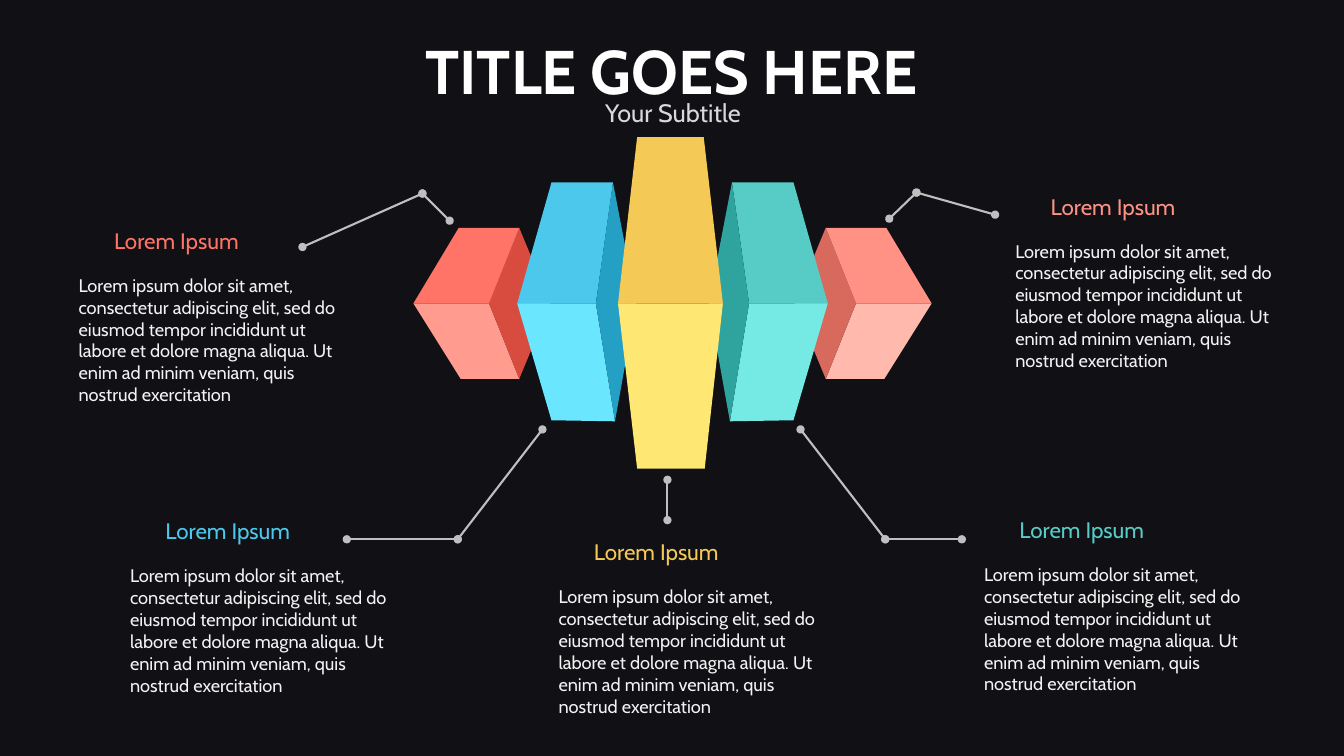
from lxml import etree
from pptx import Presentation
from pptx import util as u
from pptx.dml.color import RGBColor
from pptx.enum import shapes, text
from pptx.oxml.ns import qn


def color(value):
    return RGBColor.from_string(value)


def add_text(slide, content, box, font_format, frame_format, alignment):
    shape = slide.shapes.add_textbox(*(u.Inches(value) for value in box))
    frame = shape.text_frame
    frame_format = {"word_wrap": True, "auto_size": text.MSO_AUTO_SIZE.SHAPE_TO_FIT_TEXT} | frame_format
    for name, value in frame_format.items():
        setattr(frame, name, value)
    paragraph = frame.paragraphs[0]
    paragraph.text = content
    paragraph.alignment = alignment
    font = paragraph.runs[0].font
    font_format = {"name": "Cabin"} | font_format
    font.color.rgb = color(font_format.pop("color"))
    for name, value in font_format.items():
        setattr(font, name, value)


presentation = Presentation()
presentation.slide_width = u.Inches(13.33)
presentation.slide_height = u.Inches(7.5)
slide = presentation.slides.add_slide(presentation.slide_layouts[6])
slide.background.fill.solid()
slide.background.fill.fore_color.rgb = color("101015")

MIDDLE = 3.01
MIRROR_SUM = 13.34
outer_faces = [
    [(4.85, MIDDLE), (4.1, MIDDLE), (4.57, 3.76), (5.15, 3.76)],
    [(5.46, MIDDLE), (5.15, 2.26), (4.85, MIDDLE), (5.15, 3.76)],
    [(4.85, MIDDLE), (5.15, 2.26), (4.55, 2.26), (4.1, MIDDLE)],
]
inner_faces = [
    [(6.08, 1.81), (5.47, 1.81), (5.13, MIDDLE), (5.91, MIDDLE)],
    [(6.1, 4.18), (5.91, MIDDLE), (5.13, MIDDLE), (5.47, 4.17)],
    [(6.08, 1.81), (5.91, MIDDLE), (6.1, 4.18), (6.31, MIDDLE)],
]
center_faces = [
    [(6.13, MIDDLE), (7.17, MIDDLE), (6.99, 4.65), (6.32, 4.65)],
    [(7.17, MIDDLE), (6.13, MIDDLE), (6.32, 1.36), (6.98, 1.36)],
]
blocks = [
    (outer_faces, True, ["FFBAAD", "D76A5D", "FF9285"]),
    (inner_faces, True, ["57CCC6", "75EAE4", "2FA49E"]),
    (outer_faces, False, ["FF9C8F", "D74C3F", "FF7467"]),
    (inner_faces, False, ["4CC8EC", "6AE6FF", "24A0C4"]),
    (center_faces, False, ["FFE774", "F4C956"]),
]
for faces, mirrored, fills in blocks:
    for face, fill in zip(faces, fills):
        points = [
            (u.Inches(MIRROR_SUM - x if mirrored else x), u.Inches(y))
            for x, y in face
        ]
        builder = slide.shapes.build_freeform(*points[0])
        builder.add_line_segments(points[1:], close=True)
        shape = builder.convert_to_shape()
        shape.shadow.inherit = False
        shape.fill.solid()
        shape.fill.fore_color.rgb = color(fill)
        shape.line.fill.background()

leaders = [
    [(7.94, 4.26), (8.78, 5.35), (9.54, 5.35)],
    [(9.87, 2.13), (9.09, 1.91), (8.82, 2.17)],
    [(5.38, 4.26), (4.54, 5.35), (3.44, 5.35)],
    [(3, 2.45), (4.19, 1.92), (4.46, 2.19)],
    [(6.62, 5.16), (6.62, 4.76)],
]
for leader in leaders:
    for start, end in zip(leader, leader[1:]):
        connector = slide.shapes.add_connector(
            shapes.MSO_CONNECTOR.STRAIGHT,
            *(u.Inches(value) for value in start + end),
        )
        connector.line.color.rgb = color("BFBFBF")
        connector.line.width = u.Pt(1.5)
        for tag in ("a:headEnd", "a:tailEnd"):
            etree.SubElement(connector.line._get_or_add_ln(), qn(tag), type="oval")
        etree.SubElement(connector._element.spPr, qn("a:effectLst"))

body = (
    "Lorem ipsum dolor sit amet, consectetur adipiscing elit, sed do eiusmod "
    "tempor incididunt ut labore et dolore magna aliqua. Ut enim ad minim "
    "veniam, quis nostrud exercitation"
)
body_frame = {
    "margin_left": u.Inches(0.07),
    "margin_right": u.Inches(0.07),
    "margin_top": u.Inches(0.03),
    "margin_bottom": u.Inches(0.03),
}
heading_frame = {"vertical_anchor": text.MSO_ANCHOR.MIDDLE}
callouts = [
    (10, 2.35, "FF9285"),
    (0.71, 2.69, "FF7467"),
    (5.47, 5.78, "F4C956"),
    (9.69, 5.56, "57CCC6"),
    (1.22, 5.57, "4CC8EC"),
]
for left, top, accent in callouts:
    add_text(slide, body, (left, top, 2.87, 1.38),
             {"size": u.Pt(13), "color": "F2F2F2"}, body_frame, text.PP_ALIGN.LEFT)
    add_text(slide, "Lorem Ipsum", (left + 0.04, top - 0.49, 2, 0.37),
             {"size": u.Pt(16), "color": accent}, heading_frame, text.PP_ALIGN.CENTER)

add_text(slide, "TITLE GOES HERE", (3.65, 0.28, 6.02, 0.84),
         {"size": u.Pt(44), "bold": True, "color": "FFFFFF"}, {}, text.PP_ALIGN.CENTER)
add_text(slide, "Your Subtitle", (4.41, 0.92, 4.53, 0.4),
         {"size": u.Pt(18), "color": "D9D9D9"}, {}, text.PP_ALIGN.CENTER)

presentation.save("out.pptx")
